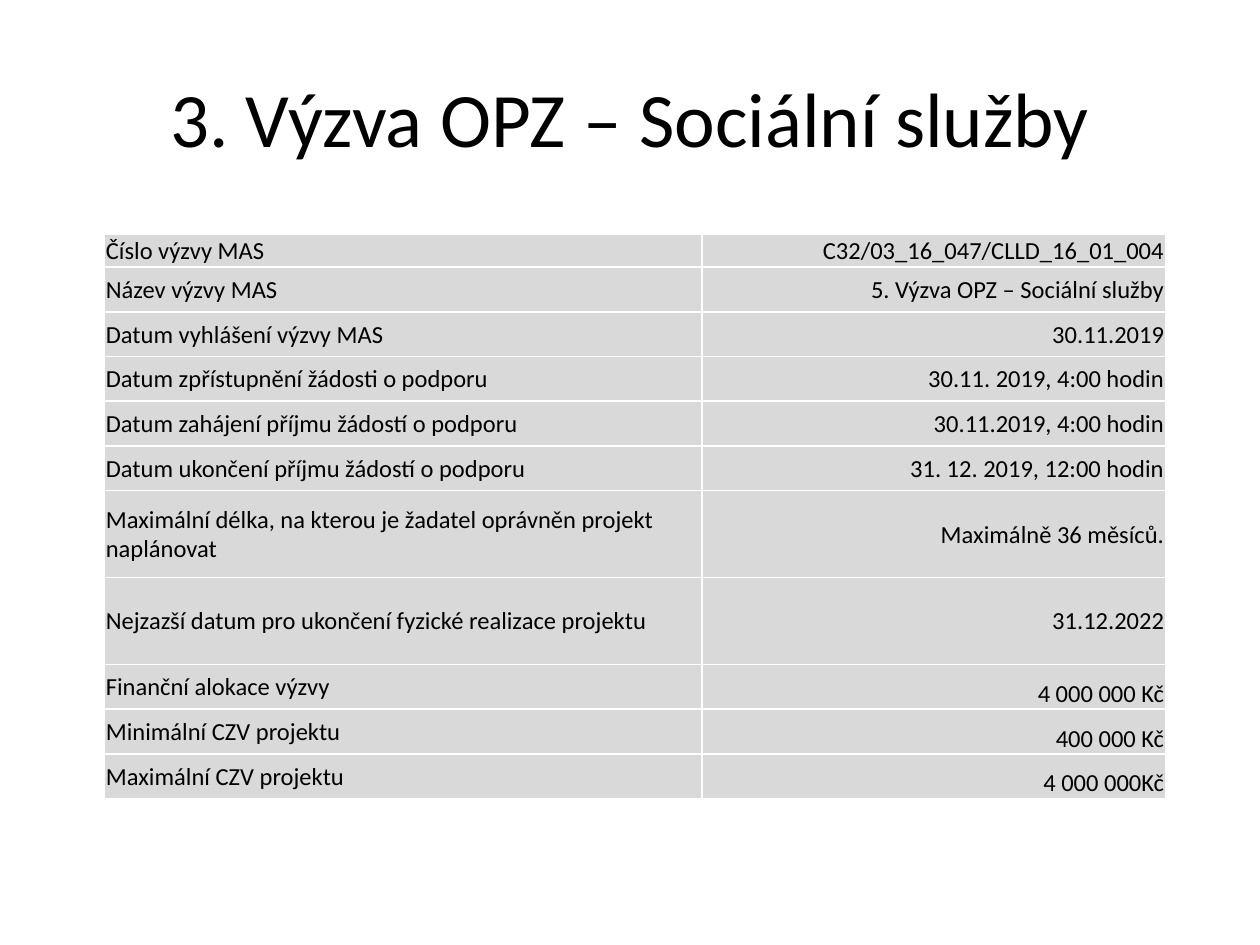
from lxml import etree
from pptx import Presentation
from pptx.dml.color import RGBColor
from pptx.enum.text import MSO_ANCHOR, PP_ALIGN
from pptx.oxml.ns import qn
from pptx.util import Inches, Pt

LEFT, CENTER, RIGHT = PP_ALIGN.LEFT, PP_ALIGN.CENTER, PP_ALIGN.RIGHT
MIDDLE, BOTTOM = MSO_ANCHOR.MIDDLE, MSO_ANCHOR.BOTTOM

# Content: label, value, row height, anchor of the value
TITLE = "3. Výzva OPZ – Sociální služby"
ROWS = [
    ("Číslo výzvy MAS", "C32/03_16_047/CLLD_16_01_004", 0.26, MIDDLE),
    ("Název výzvy MAS", "5. Výzva OPZ – Sociální služby", 0.355, MIDDLE),
    ("Datum vyhlášení výzvy MAS", "30.11.2019", 0.355, MIDDLE),
    ("Datum zpřístupnění žádosti o podporu", "30.11. 2019, 4:00 hodin", 0.355, MIDDLE),
    ("Datum zahájení příjmu žádostí o podporu", "30.11.2019, 4:00 hodin", 0.355, MIDDLE),
    ("Datum ukončení příjmu žádostí o podporu", "31. 12. 2019, 12:00 hodin", 0.355, MIDDLE),
    ("Maximální délka, na kterou je žadatel oprávněn projekt naplánovat",
     "Maximálně 36 měsíců.", 0.69, MIDDLE),
    ("Nejzazší datum pro ukončení fyzické realizace projektu", "31.12.2022", 0.69, MIDDLE),
    ("Finanční alokace výzvy", "4 000 000 Kč", 0.355, BOTTOM),
    ("Minimální CZV projektu", "400 000 Kč", 0.355, BOTTOM),
    ("Maximální CZV projektu", "4 000 000Kč", 0.355, BOTTOM),
]
COLUMN_WIDTHS = (4.74, 3.68)


def color(hex_string):
    return RGBColor.from_string(hex_string)


def format_paragraph(paragraph, size, alignment):
    paragraph.alignment = alignment
    paragraph.font.name = "Calibri"
    paragraph.font.size = Pt(size)
    paragraph.font.bold = False
    paragraph.font.color.rgb = color("000000")


def add_borders(cell, hex_string, width):
    properties = cell._tc.get_or_add_tcPr()
    for index, side in enumerate(("lnL", "lnR", "lnT", "lnB")):
        line = etree.Element(qn(f"a:{side}"), w=str(Pt(width)))
        fill = etree.SubElement(line, qn("a:solidFill"))
        etree.SubElement(fill, qn("a:srgbClr"), val=hex_string)
        properties.insert(index, line)


def fill_cell(cell, text, alignment, anchor):
    cell.text = text
    cell.vertical_anchor = anchor
    cell.margin_left = cell.margin_right = cell.margin_top = Inches(0.01)
    cell.margin_bottom = 0
    cell.fill.solid()
    cell.fill.fore_color.rgb = color("D9D9D9")
    add_borders(cell, "FFFFFF", 1)
    format_paragraph(cell.text_frame.paragraphs[0], 14, alignment)


presentation = Presentation()
presentation.slide_width, presentation.slide_height = Inches(10), Inches(7.5)
slide = presentation.slides.add_slide(presentation.slide_layouts[5])

# Title
title = slide.shapes.title
title.left, title.top = Inches(0.5), Inches(0.3)
title.width, title.height = Inches(9), Inches(1.25)
title.text_frame.text = TITLE
title.text_frame.vertical_anchor = MIDDLE
format_paragraph(title.text_frame.paragraphs[0], 44, CENTER)

# Table of call details
table = slide.shapes.add_table(
    len(ROWS), len(COLUMN_WIDTHS), Inches(0.83), Inches(1.86),
    Inches(sum(COLUMN_WIDTHS)), Inches(sum(row[2] for row in ROWS))).table
table.first_row = table.horz_banding = False
for column, width in zip(table.columns, COLUMN_WIDTHS):
    column.width = Inches(width)
for row, (label, value, height, anchor) in zip(table.rows, ROWS):
    row.height = Inches(height)
    fill_cell(row.cells[0], label, LEFT, MIDDLE)
    fill_cell(row.cells[1], value, RIGHT, anchor)

presentation.save("out.pptx")
